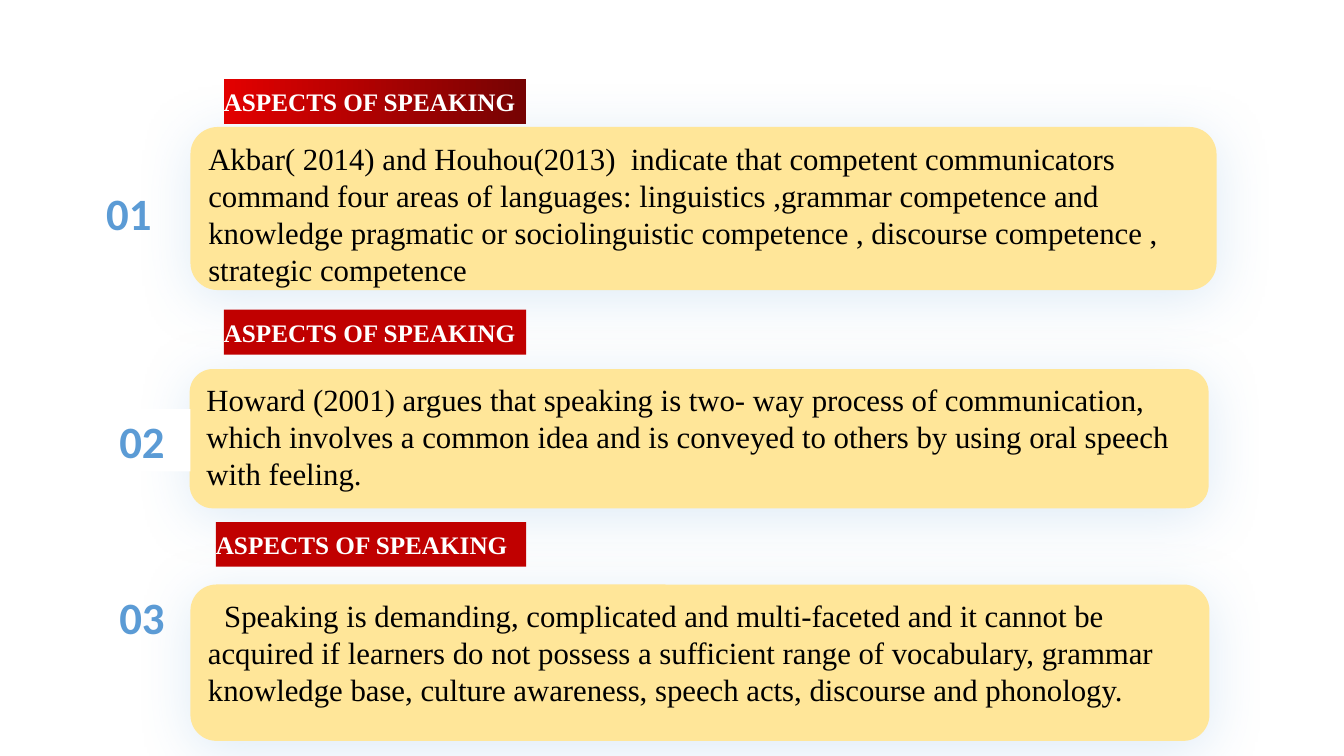
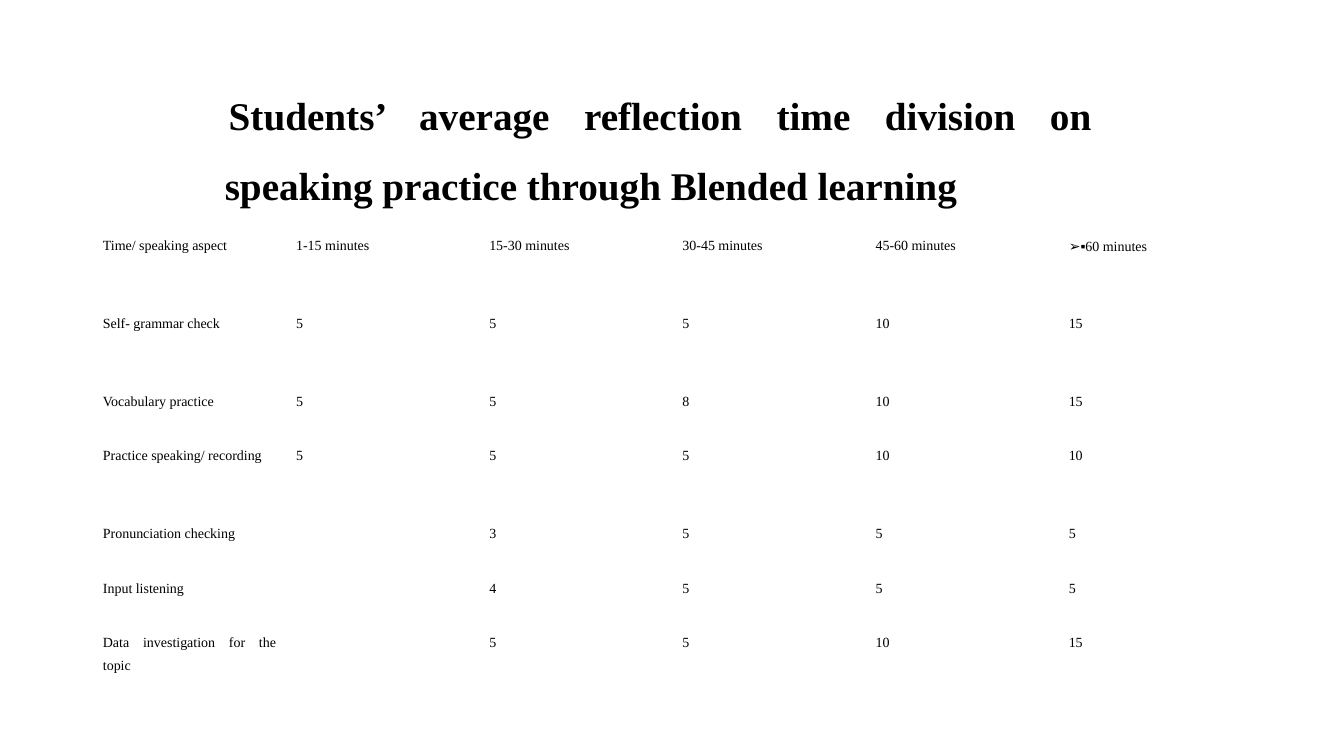
"""Build two slides on the aspects of speaking and the time spent practising them."""
from dataclasses import dataclass

from lxml.etree import SubElement
from pptx import Presentation
from pptx.dml.color import RGBColor
from pptx.enum.shapes import MSO_SHAPE
from pptx.enum.text import MSO_ANCHOR, MSO_AUTO_SIZE, PP_ALIGN
from pptx.oxml.ns import qn
from pptx.util import Cm, Pt

COLORS = {
    "text": "000000",
    "white": "FFFFFF",
    "card": "FFE699",
    "accent": "5B9BD5",
    "tag": "C00000",
    "tag_start": "E30000",
    "tag_end": "760303",
}
SERIF, SANS, SYMBOL = "Times New Roman", "Calibri", "Arial"
TAG_TEXT = "ASPECTS OF SPEAKING"
TITLE = "Students’ average reflection time division on speaking practice through Blended learning"
MARK = "➢▪"


@dataclass(frozen=True)
class Box:
    left: float
    top: float
    width: float
    height: float

    def lengths(self) -> tuple:
        return Cm(self.left), Cm(self.top), Cm(self.width), Cm(self.height)


@dataclass(frozen=True)
class Aspect:
    number: str
    text: str
    card: Box
    number_box: Box
    tag: Box
    indent: float = 0
    number_filled: bool = False
    tag_gradient: bool = False


ASPECTS = [
    Aspect(
        "01",
        "Akbar( 2014) and Houhou(2013)  indicate that competent communicators command "
        "four areas of languages: linguistics ,grammar competence and knowledge pragmatic "
        "or sociolinguistic competence , discourse competence , strategic competence",
        Box(4.8, 3.2, 25.86, 4.11),
        Box(2.03, 4.57, 2.44, 1.57),
        Box(5.64, 1.98, 7.62, 1.14),
        tag_gradient=True,
    ),
    Aspect(
        "02",
        "Howard (2001) argues that speaking is two- way process of communication, which "
        "involves a common idea and is conveyed to others by using oral speech with feeling.",
        Box(4.78, 9.3, 25.68, 3.51),
        Box(2.36, 10.31, 2.44, 1.57),
        Box(5.64, 7.8, 7.62, 1.14),
        number_filled=True,
    ),
    Aspect(
        "03",
        "Speaking is demanding, complicated and multi-faceted and it cannot be acquired if "
        "learners do not possess a sufficient range of vocabulary, grammar knowledge base, "
        "culture awareness, speech acts, discourse and phonology.",
        Box(4.8, 14.73, 25.68, 3.94),
        Box(2.36, 14.76, 2.44, 1.57),
        Box(5.44, 13.16, 7.82, 1.12),
        indent=0.41,
    ),
]

TIMES = [
    ["Time/ speaking aspect", "1-15 minutes", "15-30 minutes", "30-45 minutes",
     "45-60 minutes", MARK + "60 minutes"],
    ["Self- grammar check", "5", "5", "5", "10", "15"],
    ["Vocabulary practice", "5", "5", "8", "10", "15"],
    ["Practice speaking/ recording", "5", "5", "5", "10", "10"],
    ["Pronunciation checking", "", "3", "5", "5", "5"],
    ["Input listening", "", "4", "5", "5", "5"],
    ["Data investigation for the topic", "", "5", "5", "10", "15"],
]
ROW_HEIGHTS = [1.96, 1.96, 1.37, 1.96, 1.37, 1.37, 1.96]
TABLE_BOX = Box(2.34, 5.69, 29.21, sum(ROW_HEIGHTS))
TITLE_BOX = Box(5.41, 1.57, 22.35, 3.12)


def rgb(name: str) -> RGBColor:
    return RGBColor.from_string(COLORS[name])


def add_run(p, text: str, size: float, color: str = "text", font: str = SERIF,
            bold: bool = False) -> None:
    r = p.add_run()
    r.text = text
    r.font.size = Pt(size)
    r.font.name = font
    r.font.bold = bold
    r.font.color.rgb = rgb(color)


def set_indent(p, indent: float) -> None:
    p._p.get_or_add_pPr().set("indent", str(Cm(indent)))


def justify(p) -> None:
    p.alignment = PP_ALIGN.JUSTIFY
    p.line_spacing = 1.5


def add_box(s, box: Box, fill: str | None, shape=MSO_SHAPE.RECTANGLE,
            anchor=MSO_ANCHOR.MIDDLE, align=PP_ALIGN.LEFT):
    sp = s.shapes.add_shape(shape, *box.lengths())
    sp.shadow.inherit = False
    sp.line.fill.background()
    if fill:
        sp.fill.solid()
        sp.fill.fore_color.rgb = rgb(fill)
    else:
        sp.fill.background()
    tf = sp.text_frame
    tf.word_wrap = True
    tf.vertical_anchor = anchor
    tf.paragraphs[0].alignment = align
    return sp


def add_glow_shadow(sp) -> None:
    effects = sp._element.spPr.find(qn("a:effectLst"))
    shadow = SubElement(effects, qn("a:outerShdw"), blurRad=str(Pt(40)), dist=str(Pt(6)),
                        dir="5400000", algn="t", rotWithShape="0")
    color = SubElement(shadow, qn("a:srgbClr"), val=COLORS["accent"])
    SubElement(color, qn("a:alpha"), val="20000")


def add_card(s, aspect: Aspect) -> None:
    sp = add_box(s, aspect.card, "card", MSO_SHAPE.ROUNDED_RECTANGLE, MSO_ANCHOR.TOP)
    add_glow_shadow(sp)
    p = sp.text_frame.paragraphs[0]
    set_indent(p, aspect.indent)
    add_run(p, aspect.text, 22)


def add_number(s, aspect: Aspect) -> None:
    fill = "white" if aspect.number_filled else None
    tf = add_box(s, aspect.number_box, fill, align=PP_ALIGN.CENTER).text_frame
    tf.word_wrap = False
    add_run(tf.paragraphs[0], aspect.number, 32, "accent", SANS, bold=True)


def add_tag(s, aspect: Aspect) -> None:
    sp = add_box(s, aspect.tag, "tag")
    if aspect.tag_gradient:
        sp.fill.gradient()
        sp.fill.gradient_angle = 0
        for stop, color in zip(sp.fill.gradient_stops, ("tag_start", "tag_end")):
            stop.color.rgb = rgb(color)
    tf = sp.text_frame
    tf.margin_left = tf.margin_right = tf.margin_top = tf.margin_bottom = 0
    add_run(tf.paragraphs[0], TAG_TEXT, 18, "white", bold=True)


def build_aspects(prs) -> None:
    s = prs.slides.add_slide(prs.slide_layouts[6])
    for aspect in ASPECTS:
        add_card(s, aspect)
        add_number(s, aspect)
        add_tag(s, aspect)


def add_title(s) -> None:
    sp = s.shapes.title
    sp.left, sp.top, sp.width, sp.height = TITLE_BOX.lengths()
    tf = sp.text_frame
    tf.word_wrap = True
    tf.auto_size = MSO_AUTO_SIZE.NONE
    tf.vertical_anchor = MSO_ANCHOR.TOP
    p = tf.paragraphs[0]
    justify(p)
    set_indent(p, 0.1)
    add_run(p, TITLE, 28, bold=True)


def add_times_table(s) -> None:
    frame = s.shapes.add_table(len(TIMES), len(TIMES[0]), *TABLE_BOX.lengths())
    table = frame.table
    table.first_row = table.horz_banding = False
    for row, height in zip(table.rows, ROW_HEIGHTS):
        row.height = Cm(height)
    for cell, text in zip(table.iter_cells(), sum(TIMES, [])):
        cell.fill.background()
        p = cell.text_frame.paragraphs[0]
        justify(p)
        for part in filter(None, text.partition(MARK)):
            add_run(p, part, 10, font=SYMBOL if part == MARK else SERIF)


def build_times(prs) -> None:
    s = prs.slides.add_slide(prs.slide_layouts[5])
    add_title(s)
    add_times_table(s)


def main() -> None:
    prs = Presentation()
    prs.slide_width, prs.slide_height = Cm(33.87), Cm(19.05)
    build_aspects(prs)
    build_times(prs)
    prs.save("out.pptx")


if __name__ == "__main__":
    main()
